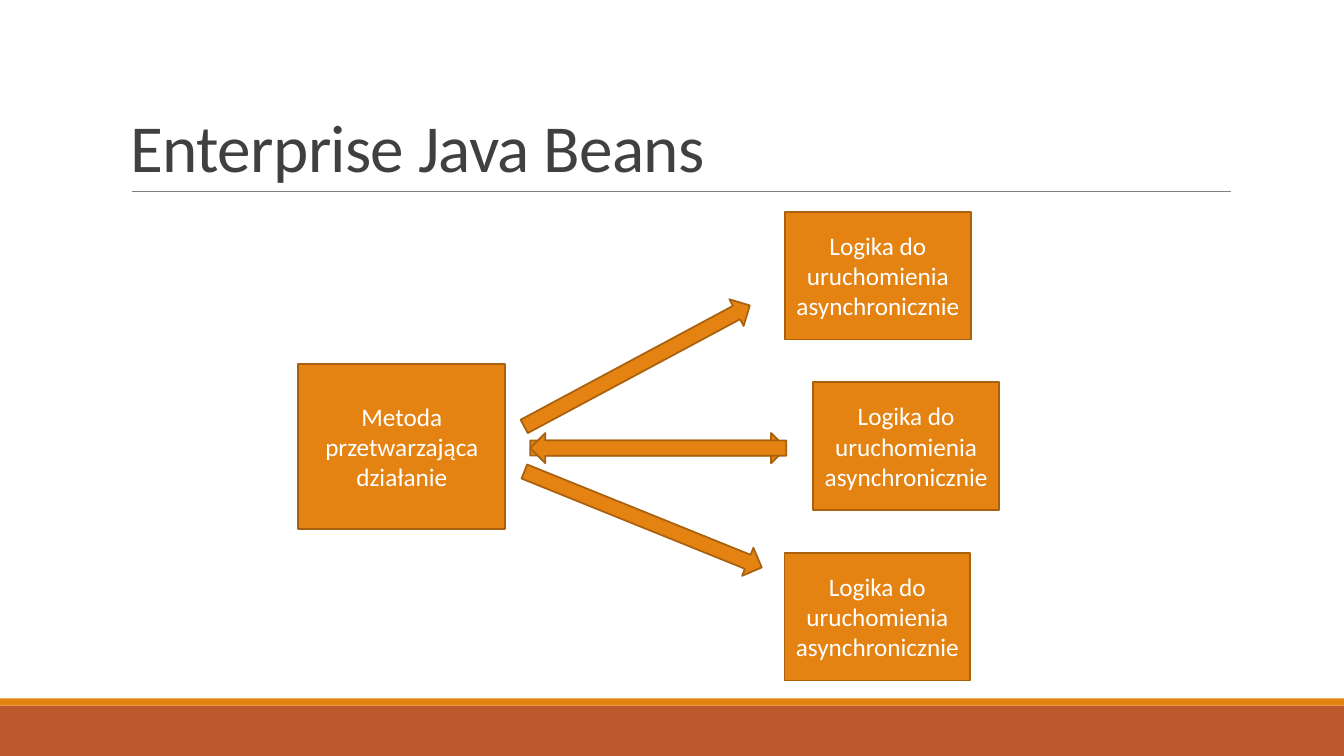
from pptx import Presentation
from pptx.dml.color import RGBColor
from pptx.enum.shapes import MSO_CONNECTOR, MSO_SHAPE
from pptx.enum.text import MSO_ANCHOR as Anchor, PP_ALIGN as Align
from pptx.oxml.ns import qn
from pptx.util import Pt
from lxml.etree import SubElement

ORANGE = RGBColor(0xE4, 0x83, 0x12)
DARK_ORANGE = RGBColor(0xA9, 0x61, 0x0D)
RUST = RGBColor(0xBD, 0x58, 0x2C)
GRAY = RGBColor(0x80, 0x80, 0x80)
CHARCOAL = RGBColor(0x40, 0x40, 0x40)
WHITE = RGBColor(0xFF, 0xFF, 0xFF)
FONT = "Calibri"
WIDTH, HEIGHT = 960, 540


def add_filled(slide, kind, left, top, width, height, fill, outline=None):
    """Add a flat preset shape, outlined if a colour is given."""
    shape = slide.shapes.add_shape(kind, Pt(left), Pt(top), Pt(width), Pt(height))
    shape.shadow.inherit = False
    shape.fill.solid()
    shape.fill.fore_color.rgb = fill
    if outline is None:
        shape.line.fill.background()
    else:
        shape.line.color.rgb = outline
        shape.line.width = Pt(1.25)
    return shape


def write(shape, text, size, color, anchor, align):
    """Write one wrapped paragraph and return it."""
    frame = shape.text_frame
    frame.text = text
    frame.word_wrap = True
    frame.vertical_anchor = anchor
    paragraph = frame.paragraphs[0]
    paragraph.alignment = align
    font = paragraph.runs[0].font
    font.name, font.size, font.color.rgb = FONT, Pt(size), color
    return paragraph


def add_title(slide, text):
    """Add the tightly spaced title and the rule beneath it."""
    box = slide.shapes.add_textbox(Pt(86.4), Pt(22.4), Pt(792), Pt(114.4))
    paragraph = write(box, text, 48, CHARCOAL, Anchor.BOTTOM, Align.LEFT)
    paragraph.line_spacing = 0.85
    paragraph.runs[0]._r.get_or_add_rPr().set("spc", "-50")
    rule = slide.shapes.add_connector(
        MSO_CONNECTOR.STRAIGHT, Pt(94.3), Pt(136.8), Pt(879), Pt(136.8))
    rule.line.color.rgb = GRAY
    rule.line.width = Pt(0.5)
    SubElement(rule._element.spPr, qn("a:effectLst"))


def add_box(slide, text, left, top, width, height):
    """Add an outlined box with centred text."""
    box = add_filled(slide, MSO_SHAPE.RECTANGLE, left, top, width, height,
                     ORANGE, DARK_ORANGE)
    write(box, text, 18, WHITE, Anchor.MIDDLE, Align.CENTER)


def add_arrow(slide, left, top, rotation):
    """Add a block arrow turned clockwise by the given degrees."""
    arrow = add_filled(slide, MSO_SHAPE.RIGHT_ARROW, left, top, 182.9, 21.6,
                       ORANGE, DARK_ORANGE)
    arrow.rotation = rotation


def main():
    """Build and save the slide."""
    presentation = Presentation()
    presentation.slide_width, presentation.slide_height = Pt(WIDTH), Pt(HEIGHT)
    slide = presentation.slides.add_slide(presentation.slide_layouts[6])
    for top, height, color in ((504, 36, RUST), (498.8, 5.2, ORANGE)):
        add_filled(slide, MSO_SHAPE.RECTANGLE, 0, top, WIDTH, height, color)
    add_title(slide, "Enterprise Java Beans")
    add_box(slide, "Metoda przetwarzająca działanie", 213.1, 259.8, 147.8, 118)
    for row, left in enumerate((560.7, 580.9, 560.3)):
        add_box(slide, "Logika do uruchomienia asynchronicznie",
                left, 151.2 + 121.8 * row, 132.7, 91.4)
    for left, top, rotation in ((378.7, 309.3, 0), (363.6, 250.6, 331.8),
                                (367.9, 360.3, 22), (378.7, 309.3, 180)):
        add_arrow(slide, left, top, rotation)
    presentation.save("out.pptx")


if __name__ == "__main__":
    main()
